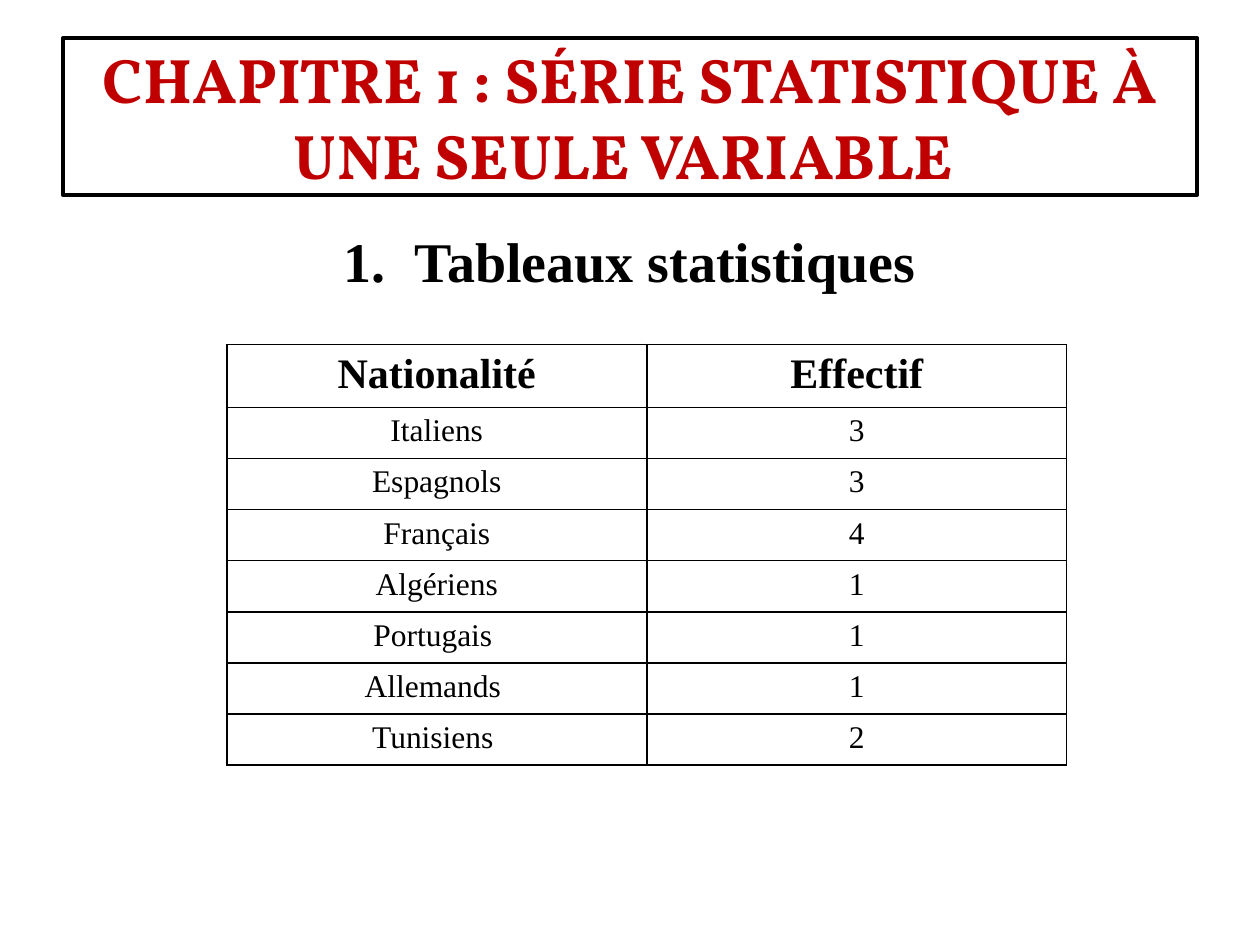
from lxml import etree
from pptx import Presentation
from pptx.dml.color import RGBColor
from pptx.enum import shapes, text
from pptx.oxml import ns
from pptx.util import Pt

BLACK = RGBColor(0, 0, 0)
WHITE = RGBColor(255, 255, 255)
RED = RGBColor(0xC0, 0, 0)
SERIF = "Times New Roman"

TITLE = "CHAPITRE 1 : SÉRIE STATISTIQUE À UNE SEULE VARIABLE "
HEADING = "Tableaux statistiques"
ROWS = [
    ("Nationalité", "Effectif"),
    ("Italiens", "3"),
    ("Espagnols", "3"),
    ("Français", "4"),
    ("Algériens", "1"),
    ("Portugais ", "1"),
    ("Allemands ", "1"),
    ("Tunisiens ", "2"),
]
LEFT, WIDTH = Pt(36), Pt(648)
COL, ROW = Pt(240), Pt(29.2)


def add(parent, tag, **attrs):
    return etree.SubElement(parent, ns.qn(tag), attrs)


def write(frame, words, size, bold=True, font=SERIF, color=BLACK):
    """Set one centred paragraph and return it."""
    frame.text = words
    para = frame.paragraphs[0]
    para.alignment = text.PP_ALIGN.CENTER
    face = para.runs[0].font
    face.name, face.size, face.bold = font, Pt(size), bold
    face.color.rgb = color
    return para


def border(cell):
    props = cell._tc.get_or_add_tcPr()
    for index, side in enumerate(("a:lnL", "a:lnR", "a:lnT", "a:lnB")):
        line = etree.Element(ns.qn(side), w=str(Pt(1)))
        fill = add(line, "a:solidFill")
        add(fill, "a:srgbClr", val=str(BLACK))
        props.insert(index, line)


def add_heading(slide):
    box = slide.shapes.add_textbox(LEFT, Pt(126), WIDTH, Pt(356.4))
    box.text_frame.word_wrap = True
    para = write(box.text_frame, HEADING, 32)
    para.space_before = Pt(4)
    props = para._p.get_or_add_pPr()
    props.set("marL", str(Pt(40.5)))
    props.set("indent", str(-Pt(40.5)))
    add(props, "a:buFont", typeface="+mj-lt")
    add(props, "a:buAutoNum", type="arabicPeriod")


def add_title(slide):
    box = slide.shapes.add_shape(
        shapes.MSO_SHAPE.RECTANGLE, LEFT, Pt(21.6), WIDTH, Pt(90))
    box.shadow.inherit = False
    box.fill.solid()
    box.fill.fore_color.rgb = WHITE
    box.line.color.rgb = BLACK
    box.line.width = Pt(2)
    box.text_frame.word_wrap = True
    box.text_frame.vertical_anchor = text.MSO_ANCHOR.MIDDLE
    write(box.text_frame, TITLE, 36, font="Vollkorn", color=RED)


def add_table(slide):
    count, cols = len(ROWS), len(ROWS[0])
    table = slide.shapes.add_table(
        count, cols, Pt(129.6), Pt(196.8), COL * cols, ROW * count).table
    for col in table.columns:
        col.width = COL
    for i, row in enumerate(ROWS):
        table.rows[i].height = ROW
        for j, words in enumerate(row):
            cell = table.cell(i, j)
            cell.fill.background()
            border(cell)
            write(cell.text_frame, words, 18 if i else 24, bold=i == 0)


def main():
    deck = Presentation()
    deck.slide_width, deck.slide_height = Pt(720), Pt(540)
    slide = deck.slides.add_slide(deck.slide_layouts[6])
    add_heading(slide)
    add_title(slide)
    add_table(slide)
    deck.save("out.pptx")


if __name__ == "__main__":
    main()
